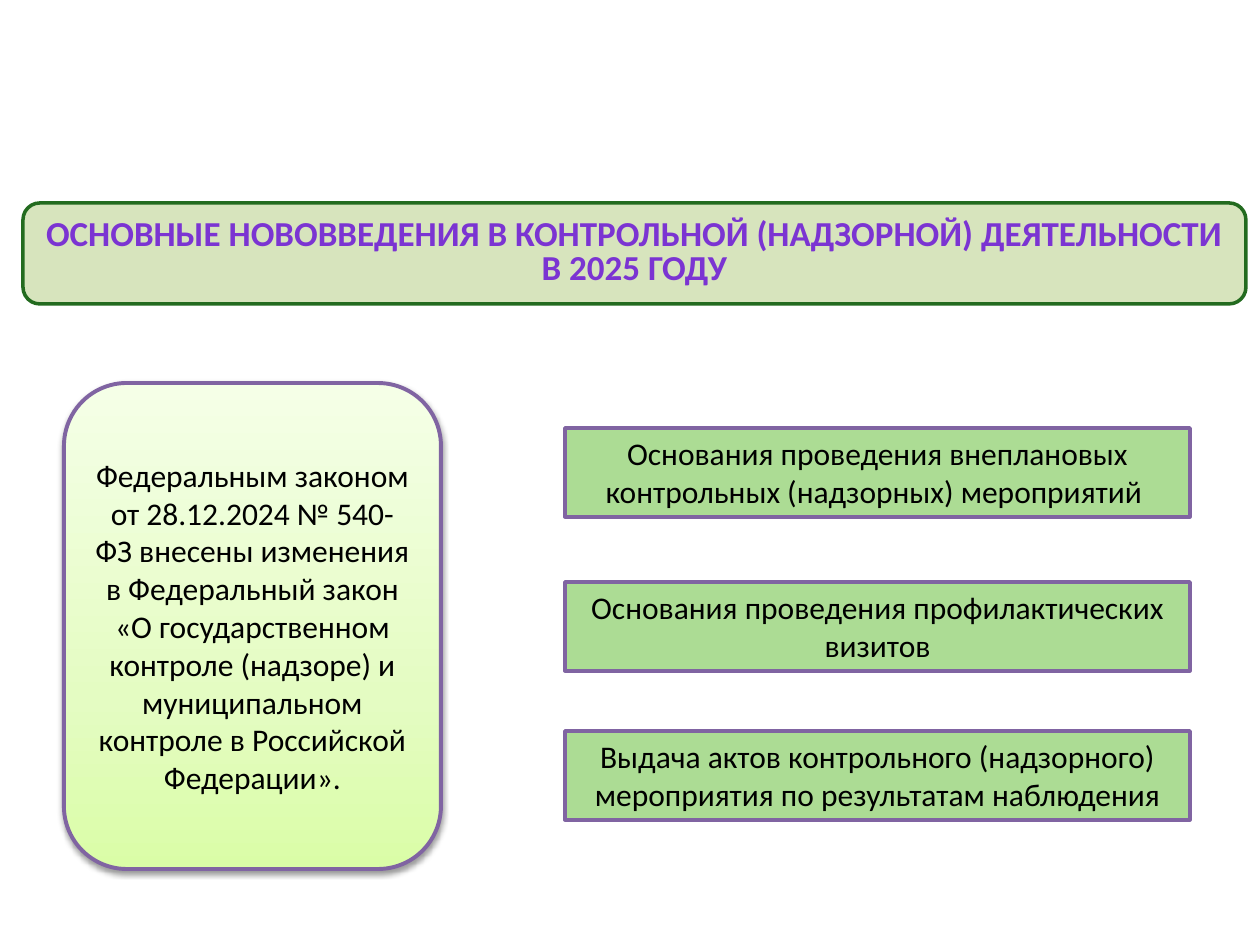
from copy import deepcopy
from dataclasses import dataclass

from lxml import etree
from pptx import Presentation
from pptx import util as u
from pptx.dml.color import RGBColor
from pptx.enum import shapes, text
from pptx.oxml import ns

EMU_PER_PX = 914400 / 126


@dataclass(frozen=True)
class Theme:
    font: str = "Calibri"
    heading_size: int = 20
    body_size: int = 18
    heading_text: str = "7B34D2"
    heading_fill: str = "D7E4BD"
    heading_line: str = "236B1F"
    body_text: str = "000000"
    topic_fill: str = "ACDC94"
    violet_line: str = "8064A2"
    law_gradient: tuple = ((0, "DAFDA7"), (0.35, "E4FCC2"), (1, "F5FFE7"))


THEME = Theme()

HEADING = "ОСНОВНЫЕ НОВОВВЕДЕНИЯ В КОНТРОЛЬНОЙ (НАДЗОРНОЙ) ДЕЯТЕЛЬНОСТИ В 2025 ГОДУ"
LAW = (
    "Федеральным законом от 28.12.2024 № 540-ФЗ внесены изменения "
    "в Федеральный закон «О государственном контроле (надзоре) и муниципальном "
    "контроле в Российской Федерации»."
)
TOPICS = (
    (428, "Основания проведения внеплановых контрольных (надзорных) мероприятий "),
    (582, "Основания проведения профилактических визитов"),
    (731, "Выдача актов контрольного (надзорного) мероприятия по результатам наблюдения"),
)


def px(value):
    return u.Emu(round(value * EMU_PER_PX))


def rgb(value):
    return RGBColor.from_string(value)


def apply(target, values):
    for name, value in values.items():
        setattr(target, name, value)


def add_panel(slide, kind, box, line, line_width, fill=None):
    shape = slide.shapes.add_shape(kind, *map(px, box))
    shape.shadow.inherit = False
    shape.line.color.rgb = rgb(line)
    shape.line.width = u.Pt(line_width)
    if fill:
        shape.fill.solid()
        shape.fill.fore_color.rgb = rgb(fill)
    return shape


def write(shape, content, size, color, frame=None, paragraph=None, bold=False):
    """Set centred text; frame and paragraph hold extra format values."""
    text_frame = shape.text_frame
    apply(text_frame, {"word_wrap": True,
                       "vertical_anchor": text.MSO_ANCHOR.MIDDLE, **(frame or {})})
    text_frame.text = content
    first = text_frame.paragraphs[0]
    apply(first, {"alignment": text.PP_ALIGN.CENTER, **(paragraph or {})})
    apply(first.font, {"name": THEME.font, "size": u.Pt(size), "bold": bold})
    first.font.color.rgb = rgb(color)


def fill_gradient(shape, stops, angle):
    fill = shape.fill
    fill.gradient()
    fill.gradient_angle = angle
    stop_list = shape.element.spPr.find(".//" + ns.qn("a:gsLst"))
    while len(stop_list) < len(stops):
        stop_list.insert(1, deepcopy(stop_list[0]))
    for stop, (position, color) in zip(fill.gradient_stops, stops):
        stop.position = position
        stop.color.rgb = rgb(color)


def drop_shadow(shape, blur, distance, opacity):
    effects = shape.element.spPr.find(ns.qn("a:effectLst"))
    shadow = etree.SubElement(
        effects, ns.qn("a:outerShdw"), blurRad=str(u.Pt(blur)),
        dist=str(u.Pt(distance)), dir="5400000", rotWithShape="0")
    color = etree.SubElement(shadow, ns.qn("a:srgbClr"), val="000000")
    etree.SubElement(color, ns.qn("a:alpha"), val=str(opacity * 1000))


def add_heading(slide):
    box = (23, 203, 1223, 101)
    panel = add_panel(slide, shapes.MSO_SHAPE.ROUNDED_RECTANGLE, box,
                      THEME.heading_line, 2, THEME.heading_fill)
    title = slide.shapes.title
    panel.element.addnext(title.element)
    apply(title, dict(zip(("left", "top", "width", "height"), map(px, box))))
    write(title, HEADING, THEME.heading_size, THEME.heading_text,
          frame={"auto_size": text.MSO_AUTO_SIZE.NONE,
                 "margin_left": px(18), "margin_right": px(18)},
          paragraph={"line_spacing": 0.8, "space_before": u.Pt(0)}, bold=True)


def add_law_card(slide):
    card = add_panel(slide, shapes.MSO_SHAPE.ROUNDED_RECTANGLE, (64, 383, 377, 486),
                     THEME.violet_line, 2.25)
    fill_gradient(card, THEME.law_gradient, 90)
    drop_shadow(card, 3.1, 1.6, 38)
    write(card, LAW, THEME.body_size, THEME.body_text)


def add_topic(slide, top, content):
    topic = add_panel(slide, shapes.MSO_SHAPE.RECTANGLE, (565, top, 625, 89),
                      THEME.violet_line, 2, THEME.topic_fill)
    write(topic, content, THEME.body_size, THEME.body_text,
          frame={"auto_size": text.MSO_AUTO_SIZE.SHAPE_TO_FIT_TEXT,
                 "vertical_anchor": text.MSO_ANCHOR.TOP})


def main():
    presentation = Presentation()
    presentation.slide_width, presentation.slide_height = px(1260), px(945)
    slide = presentation.slides.add_slide(presentation.slide_layouts.get_by_name("Title Only"))
    add_heading(slide)
    add_law_card(slide)
    for top, content in TOPICS:
        add_topic(slide, top, content)
    presentation.save("out.pptx")


if __name__ == "__main__":
    main()
